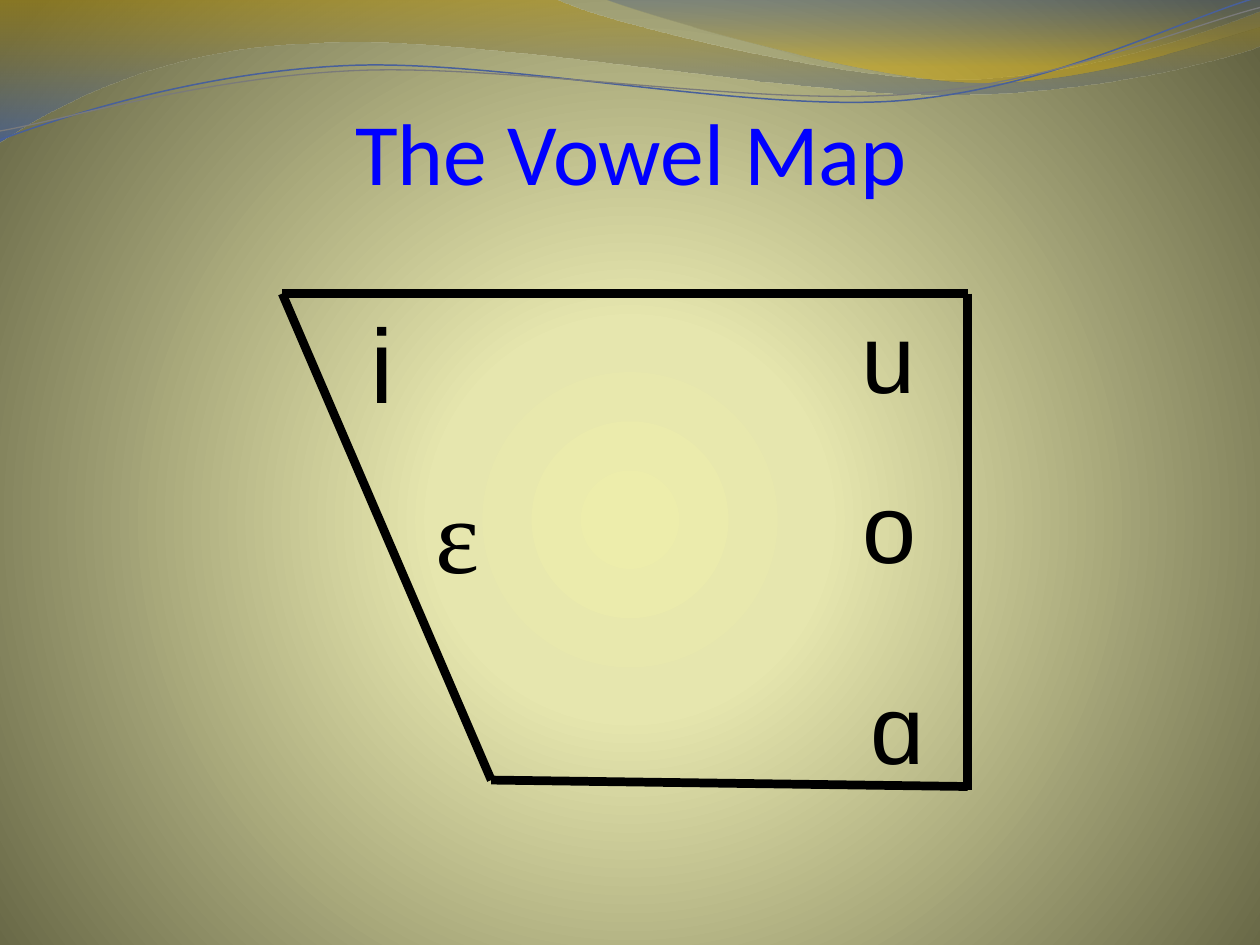
import math
import lxml.etree
import pptx
import pptx.dml.color
import pptx.enum.shapes
import pptx.enum.text
import pptx.oxml.ns
import pptx.util

RGB = pptx.dml.color.RGBColor
BLACK, BLUE = RGB(0, 0, 0), RGB(0, 0, 255)
CREAM, SAND, OLIVE = RGB(0xED, 0xED, 0xAB), RGB(0xE6, 0xE6, 0xAE), RGB(0x63, 0x63, 0x42)
GOLD, SKY = RGB(0xB6, 0x90, 0x00), RGB(0x33, 0x59, 0xB7)
NAVY, AMBER = RGB(0x32, 0x4C, 0x8D), RGB(0xD9, 0xAC, 0x00)
STEEL, GREY = RGB(0x48, 0x60, 0x9B), RGB(0x7A, 0x7A, 0x7A)

WIDTH, HEIGHT = pptx.util.Inches(10), pptx.util.Inches(7.5)
CELL = WIDTH / 10
LINE_TILT = -2.7

LOWER_WAVE = [
    [(0, 0)], [(4.4, -0.01)],
    [(4.76, 0.17), (6.64, 0.63), (7.58, 0.63)],
    [(8.53, 0.63), (9.58, 0.26), (10, 0.09)],
    [(10.01, 0.36)],
    [(9.83, 0.44), (8.7, 0.76), (7.46, 0.75)],
    [(6.22, 0.75), (3.82, 0.28), (2.57, 0.34)],
    [(1.29, 0.36), (0.46, 0.83), (-0.01, 1.13)],
    [(0, 0)],
]
UPPER_WAVE = [
    [(4.79, -0.01)],
    [(5.09, 0.11), (6.82, 0.62), (7.69, 0.65)],
    [(8.56, 0.69), (9.61, 0.32), (10, 0.21)],
    [(10, 0)],
    [(4.79, -0.01)],
]
BLUE_LINE = [
    [(0, 1.11)],
    [(0.48, 0.93), (1.58, 0.57), (2.77, 0.52)],
    [(3.95, 0.47), (5.93, 0.89), (7.13, 0.8)],
    [(8.33, 0.71), (9.38, 0.15), (9.98, -0.02)],
]
GREY_LINE = [
    [(0, 1.04)],
    [(0.47, 0.96), (1.64, 0.61), (2.83, 0.56)],
    [(4.03, 0.51), (5.97, 0.84), (7.17, 0.75)],
    [(8.36, 0.67), (9.41, 0.21), (10, 0.06)],
]


def add_child(parent, tag, **attributes):
    return lxml.etree.SubElement(parent, pptx.oxml.ns.qn(tag), attributes)


def set_gradient(fill, owner, stops, circle=None):
    fill.gradient()
    gradient = next(owner.iter(pptx.oxml.ns.qn("a:gradFill")))
    for child in list(gradient):
        gradient.remove(child)
    stop_list = add_child(gradient, "a:gsLst")
    for position, color, opacity in stops:
        stop = add_child(stop_list, "a:gs", pos=str(position * 1000))
        tint = add_child(stop, "a:srgbClr", val=str(color))
        if opacity < 100:
            add_child(tint, "a:alpha", val=str(opacity * 1000))
    if circle:
        center = add_child(gradient, "a:path", path="circle")
        add_child(center, "a:fillToRect", **{side: str(share * 1000) for side, share in circle.items()})
    else:
        add_child(gradient, "a:lin", ang="5400000", scaled="1")


def turn(segments, pivot, degrees):
    cos, sin = math.cos(math.radians(degrees)), math.sin(math.radians(degrees))
    px, py = pivot
    return [[(px + (x - px) * cos - (y - py) * sin, py + (x - px) * sin + (y - py) * cos)
             for x, y in segment] for segment in segments]


def add_curve(page, box, segments, closed):
    left, top, cell = box
    places = [[(round(left + x * cell), round(top + y * cell)) for x, y in segment]
              for segment in segments]
    builder = page.shapes.build_freeform(*places[0][0])
    builder.add_line_segments([segment[-1] for segment in places[1:]], close=closed)
    shape = builder.convert_to_shape()
    shape.shadow.inherit = False
    steps = list(shape._element.iter(pptx.oxml.ns.qn("a:lnTo")))
    for step, segment in zip(steps, places[1:]):
        if len(segment) == 3:
            step.tag = pptx.oxml.ns.qn("a:cubicBezTo")
            step.remove(step[0])
            for x, y in segment:
                add_child(step, "a:pt", x=str(x - shape.left), y=str(y - shape.top))
    return shape


def add_waves(page, box):
    for segments, stops in [
        (LOWER_WAVE, [(0, GOLD, 45), (100, SKY, 55)]),
        (UPPER_WAVE, [(0, NAVY, 30), (80, AMBER, 45)]),
    ]:
        wave = add_curve(page, box, segments, True)
        set_gradient(wave.fill, wave._element, stops)
        wave.line.fill.background()
    for segments, color, weight, middle in [
        (BLUE_LINE, STEEL, 0.85, (4.99, 0.57)),
        (GREY_LINE, GREY, 0.75, (5, 0.59)),
    ]:
        curve = add_curve(page, box, turn(segments, middle, -LINE_TILT), False)
        curve.rotation = LINE_TILT
        curve.fill.background()
        curve.line.color.rgb = color
        curve.line.width = pptx.util.Pt(weight)


def write_text(shape, text, *, size, font, color, spacing=None, hanging=0, before=0):
    frame = shape.text_frame
    frame.word_wrap = True
    frame.auto_size = pptx.enum.text.MSO_AUTO_SIZE.NONE
    para = frame.paragraphs[0]
    para.alignment = pptx.enum.text.PP_ALIGN.CENTER
    para.line_spacing = spacing
    if before:
        para.space_before = pptx.util.Pt(0)
        gap = para._p.pPr.find(pptx.oxml.ns.qn("a:spcBef"))
        gap.remove(gap[0])
        add_child(gap, "a:spcPct", val=str(before * 1000))
    if hanging:
        indent = pptx.util.Inches(hanging)
        para._p.pPr.set("marL", str(indent))
        para._p.pPr.set("indent", str(-indent))
    span = para.add_run()
    span.text = text
    span.font.size = pptx.util.Pt(size)
    span.font.name = font
    span.font.color.rgb = color


def add_title(page, box, text):
    title = page.shapes.title
    title._element.getparent().append(title._element)
    title.left, title.top, title.width, title.height = map(round, box)
    frame = title.text_frame
    frame.vertical_anchor = pptx.enum.text.MSO_ANCHOR.BOTTOM
    frame.margin_left = frame.margin_right = frame.margin_bottom = 0
    frame.margin_top = pptx.util.Inches(0.05)
    write_text(title, text, size=50, font="Calibri", color=BLUE)


def add_vowel_map(page, box):
    left, top, width, height = box

    def place(x, y):
        return round(left + x * width / 100), round(top + y * height / 100)

    front, back, low_front = (0, 0), (100, 0), (30.5, 98)
    for start, end in [(front, low_front), (front, back), (low_front, (100, 99.3)), (back, (100, 100))]:
        side = page.shapes.add_connector(
            pptx.enum.shapes.MSO_CONNECTOR.STRAIGHT, *place(*start), *place(*end))
        side.line.color.rgb = BLACK
        side.line.width = pptx.util.Pt(5)
        add_child(side._element.spPr, "a:effectLst")

    for vowel, x, y, across, down, size, font, spacing in [
        ("ɑ", 79.6, 74.1, 20.2, 23.9, 55.5, "Arial", None),
        ("i", 2.94, 2.6, 23.2, 27.4, 60, "Arial", 0.9),
        ("u", 78.3, 2, 20.2, 23.9, 55.5, "Arial", 0.9),
        ("ε", 16, 34, 19.1, 25.4, 60.1, "Times New Roman", None),
        ("o", 79.8, 38.1, 17.6, 23.4, 55.5, "Arial", 0.8),
    ]:
        label = page.shapes.add_textbox(
            *place(x, y), round(across * width / 100), round(down * height / 100))
        write_text(label, vowel, size=size, font=font, color=BLACK,
                   spacing=spacing, hanging=0.3, before=20)


def main():
    deck = pptx.Presentation()
    deck.slide_width, deck.slide_height = WIDTH, HEIGHT
    page = deck.slides.add_slide(deck.slide_layouts[5])
    set_gradient(page.background.fill, page._element,
                 [(0, CREAM, 100), (25, SAND, 100), (100, OLIVE, 100)],
                 circle={"l": 10, "t": 110, "r": 10, "b": 100})
    add_waves(page, (0, 0, CELL))
    add_title(page, [CELL * n for n in (0.51, 0.36, 9, 1.25)], "The Vowel Map")
    add_vowel_map(page, [CELL * n for n in (2.24, 2.33, 5.44, 3.94)])
    deck.save("out.pptx")


if __name__ == "__main__":
    main()
